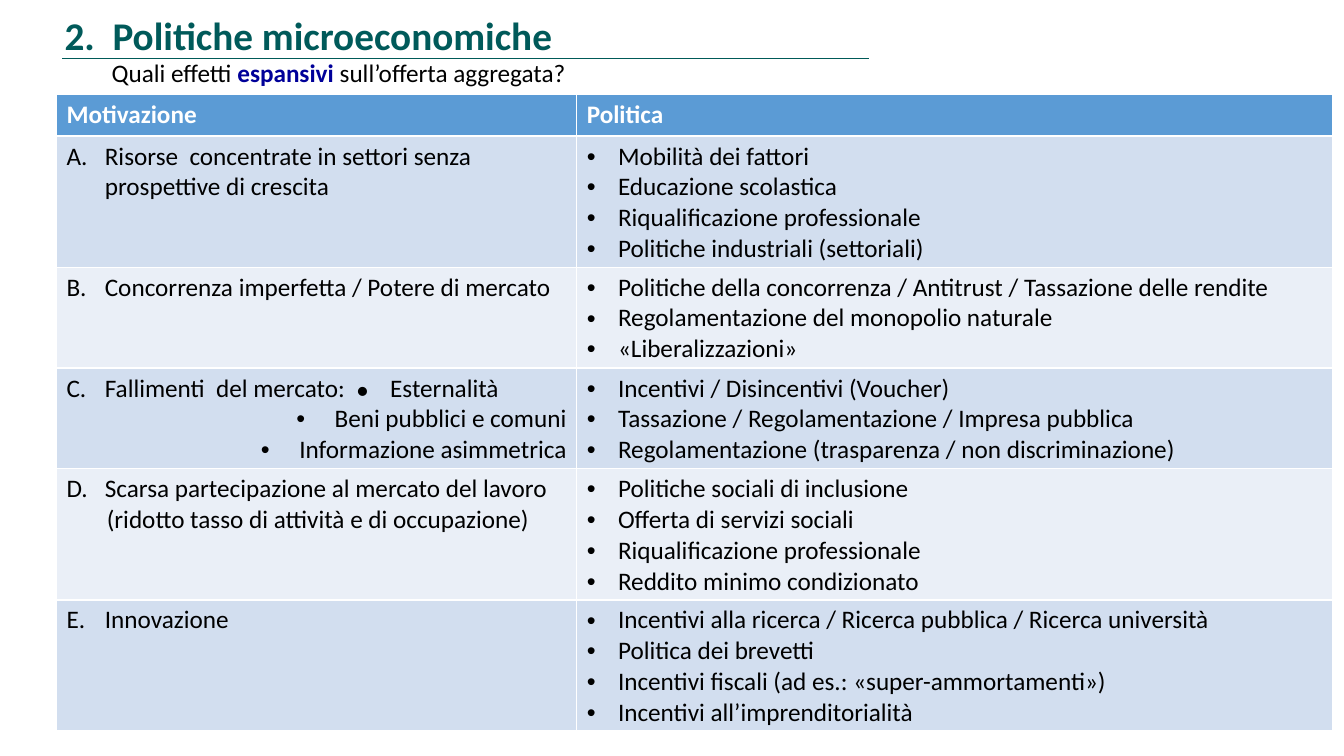
from dataclasses import dataclass
from pptx import Presentation
from pptx.dml.color import RGBColor as Rgb
from pptx.enum.shapes import MSO_CONNECTOR as Conn
from pptx.enum.text import MSO_ANCHOR as Anchor, MSO_AUTO_SIZE as Fit, PP_ALIGN as Align
from pptx.oxml.xmlchemy import OxmlElement as Elem
from pptx.util import Inches, Pt


@dataclass(frozen=True)
class Theme:
    font: str = "Calibri"
    title: int = 28
    body: int = 18
    dot: int = 14
    teal: str = "005A5A"
    rule: str = "005A58"
    navy: str = "000099"
    black: str = "000000"
    white: str = "FFFFFF"
    head: str = "5B9BD5"
    bands: tuple = ("D2DEEF", "EAEFF7")


T = Theme()
HANG, DEEP = 0.31, 0.38

# Each row: reason, then its policies
ROWS = [
    ("Risorse  concentrate in settori senza prospettive di crescita",
     ["Mobilità dei fattori", "Educazione scolastica",
      "Riqualificazione professionale", "Politiche industriali (settoriali)"]),
    ("Concorrenza imperfetta / Potere di mercato",
     ["Politiche della concorrenza / Antitrust / Tassazione delle rendite",
      "Regolamentazione del monopolio naturale", "«Liberalizzazioni»"]),
    ("Fallimenti  del mercato:  ",
     ["Incentivi / Disincentivi (Voucher)",
      "Tassazione / Regolamentazione / Impresa pubblica",
      "Regolamentazione (trasparenza / non discriminazione)"]),
    ("Scarsa partecipazione al mercato del lavoro",
     ["Politiche sociali di inclusione", "Offerta di servizi sociali",
      "Riqualificazione professionale", "Reddito minimo condizionato"]),
    ("Innovazione",
     ["Incentivi alla ricerca / Ricerca pubblica / Ricerca università",
      "Politica dei brevetti",
      "Incentivi fiscali (ad es.: «super-ammortamenti»)",
      "Incentivi all’imprenditorialità"]),
]
FAILS = ["Beni pubblici e comuni", "Informazione asimmetrica"]


def write(para, text, size=T.body, color=T.black, bold=False):
    run = para.add_run()
    run.text = text
    font = run.font
    font.name, font.size, font.bold = T.font, Pt(size), bold
    font.color.rgb = Rgb.from_string(color)


def mark(para, left, start=None):
    """Hang the paragraph on a bullet, or on a letter counted from start."""
    props = para._p.get_or_add_pPr()
    props.set("marL", str(Inches(left)))
    props.set("indent", str(-Inches(left)))
    face = Elem("a:buFont")
    face.set("typeface", "Arial" if start is None else "+mj-lt")
    if start is None:
        sign = Elem("a:buChar")
        sign.set("char", "•")
    else:
        sign = Elem("a:buAutoNum")
        sign.set("type", "alphaUcPeriod")
        sign.set("startAt", str(start))
    props.append(face)
    props.append(sign)


def add_tab(para, pos):
    tabs, tab = Elem("a:tabLst"), Elem("a:tab")
    tab.set("pos", str(Inches(pos)))
    tab.set("algn", "l")
    tabs.append(tab)
    para._p.get_or_add_pPr().append(tabs)


def place(shape, x, y, w, h):
    shape.left, shape.top = Inches(x), Inches(y)
    shape.width, shape.height = Inches(w), Inches(h)


def draw_head(slide, x, y, w, h):
    title = slide.shapes.title
    place(title, x, y, w, h)
    frame = title.text_frame
    frame.auto_size, frame.vertical_anchor = Fit.NONE, Anchor.TOP
    para = frame.paragraphs[0]
    para.alignment = Align.LEFT
    write(para, "2.  Politiche microeconomiche", size=T.title, color=T.teal, bold=True)

    left, base = Inches(x + 0.08), Inches(y + 0.52)
    rule = slide.shapes.add_connector(Conn.STRAIGHT, left, base, left + Inches(8), base)
    rule.line.color.rgb = Rgb.from_string(T.rule)
    rule.line.width = Pt(0.5)
    rule._element.spPr.append(Elem("a:effectLst"))


def draw_ask(slide, x, y, w, h):
    box = slide.shapes.add_textbox(*map(Inches, (x, y, w, h)))
    box.text_frame.word_wrap = True
    para = box.text_frame.paragraphs[0]
    para.line_spacing = 1.05
    para.space_before = Pt(2.7)
    write(para, "Quali effetti ")
    write(para, "espansivi ", color=T.navy, bold=True)
    write(para, "sull’offerta aggregata?")


def fill_cell(cell, color):
    cell.fill.solid()
    cell.fill.fore_color.rgb = Rgb.from_string(color)
    return cell.text_frame


def fill_cause(frame, num, text):
    para = frame.paragraphs[0]
    mark(para, DEEP, start=num)
    write(para, text)
    if num == 3:
        add_tab(para, 3.21)
        write(para, "●", size=T.dot)
        write(para, "\tEsternalità")
        for fail in FAILS:
            para = frame.add_paragraph()
            para.alignment = Align.RIGHT
            mark(para, DEEP)
            write(para, fail)
    elif num == 4:
        para = frame.add_paragraph()
        para._p.get_or_add_pPr().set("marL", str(Inches(0.4)))
        write(para, "(ridotto tasso di attività e di occupazione)")


def fill_list(frame, items):
    for i, item in enumerate(items):
        para = frame.add_paragraph() if i else frame.paragraphs[0]
        mark(para, HANG)
        write(para, item)


def draw_table(slide, x, y, w, h):
    shape = slide.shapes.add_table(len(ROWS) + 1, 2, *map(Inches, (x, y, w, h)))
    table = shape.table
    table.columns[0].width = Inches(5.16)
    table.columns[1].width = Inches(w - 5.16)
    table.rows[0].height = Inches(0.41)
    for cell, name in zip(table.rows[0].cells, ("Motivazione", "Politica")):
        write(fill_cell(cell, T.head).paragraphs[0], name, color=T.white, bold=True)
    for num, (cause, items) in enumerate(ROWS, 1):
        table.rows[num].height = Inches(0.1 + 0.3 * len(items))
        band = T.bands[(num - 1) % 2]
        left, right = table.rows[num].cells
        fill_cause(fill_cell(left, band), num, cause)
        fill_list(fill_cell(right, band), items)


def main():
    deck = Presentation()
    deck.slide_width, deck.slide_height = Inches(13.33), Inches(7.5)
    slide = deck.slides.add_slide(deck.slide_layouts[5])
    draw_head(slide, 0.54, 0.06, 9.54, 0.57)
    draw_ask(slide, 1.01, 0.5, 11.98, 0.42)
    draw_table(slide, 0.56, 0.94, 12.66, 6.31)
    deck.save("out.pptx")


if __name__ == "__main__":
    main()
